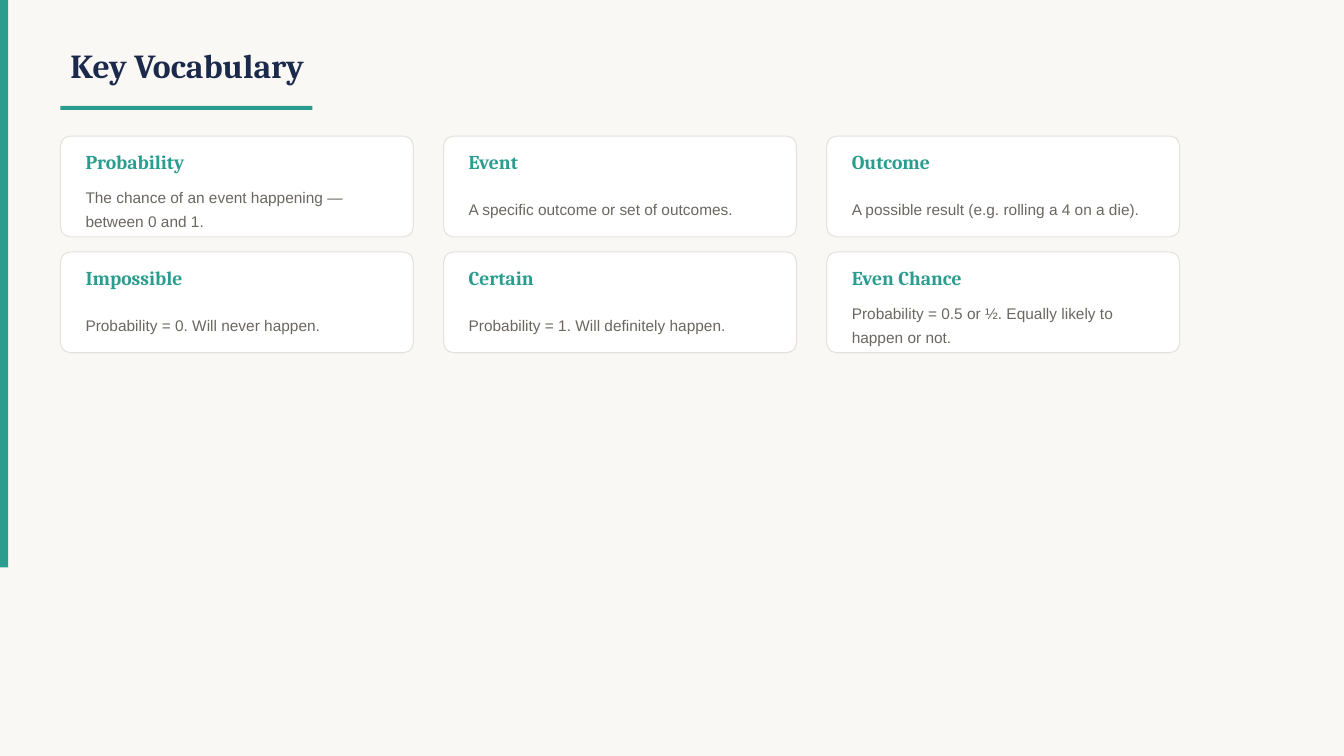
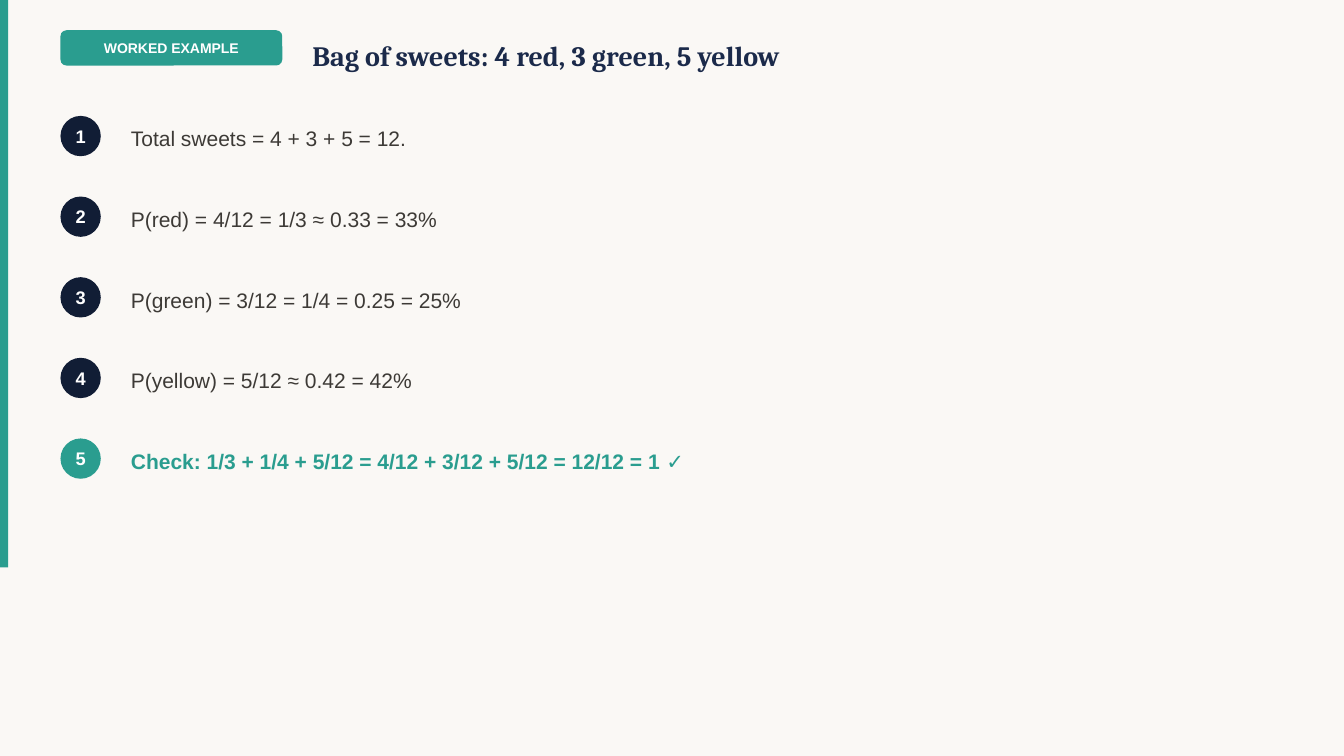
from dataclasses import dataclass

from pptx import Presentation
from pptx.dml.color import RGBColor
from pptx.enum.shapes import MSO_SHAPE
from pptx.enum.text import MSO_ANCHOR, PP_ALIGN
from pptx.util import Inches, Pt

RECTANGLE = MSO_SHAPE.RECTANGLE
ROUNDED = MSO_SHAPE.ROUNDED_RECTANGLE
OVAL = MSO_SHAPE.OVAL
MIDDLE = MSO_ANCHOR.MIDDLE
LEFT, CENTER = PP_ALIGN.LEFT, PP_ALIGN.CENTER

# Content
VOCABULARY_TITLE = "Key Vocabulary"
VOCABULARY = [
    ("Probability", "The chance of an event happening — between 0 and 1."),
    ("Event", "A specific outcome or set of outcomes."),
    ("Outcome", "A possible result (e.g. rolling a 4 on a die)."),
    ("Impossible", "Probability = 0. Will never happen."),
    ("Certain", "Probability = 1. Will definitely happen."),
    ("Even Chance", "Probability = 0.5 or ½. Equally likely to happen or not."),
]
EXAMPLE_BADGE = "WORKED EXAMPLE"
EXAMPLE_TITLE = "Bag of sweets: 4 red, 3 green, 5 yellow"
EXAMPLE_STEPS = [
    "Total sweets = 4 + 3 + 5 = 12.",
    "P(red) = 4/12 = 1/3 ≈ 0.33 = 33%",
    "P(green) = 3/12 = 1/4 = 0.25 = 25%",
    "P(yellow) = 5/12 ≈ 0.42 = 42%",
    "Check: 1/3 + 1/4 + 5/12 = 4/12 + 3/12 + 5/12 = 12/12 = 1 ✓",
]


@dataclass(frozen=True)
class Theme:
    paper: str = "FAF8F5"
    white: str = "FFFFFF"
    teal: str = "2A9D8F"
    navy: str = "1B2A4A"
    midnight: str = "111D35"
    ink: str = "3D3A36"
    muted: str = "6B6660"
    border: str = "E5E2DC"
    heading_font: str = "Cambria"
    body_font: str = "Arial"
    title_size: int = 24
    example_title_size: int = 20
    step_size: int = 15
    term_size: int = 14
    number_size: int = 13
    meaning_size: int = 11
    badge_size: int = 10


THEME = Theme()
MARGIN = 0.6


# Helpers
def write(shape, text, *, size, color, font=THEME.body_font, bold=False,
          align=LEFT, line_spacing=None):
    frame = shape.text_frame
    frame.word_wrap = True
    frame.vertical_anchor = MIDDLE
    para = frame.paragraphs[0]
    para.alignment = align
    if line_spacing:
        para.line_spacing = line_spacing
    span = para.add_run()
    span.text = text
    span.font.name = font
    span.font.size = Pt(size)
    span.font.bold = bold
    span.font.color.rgb = RGBColor.from_string(color)


def add_text(page, area, text, **style):
    box = page.shapes.add_textbox(*map(Inches, area))
    write(box, text, **style)


def add_heading(page, area, text, size, color=THEME.navy):
    add_text(page, area, text, size=size, color=color,
             font=THEME.heading_font, bold=True)


def add_block(page, kind, area, fill, line=None, corner=None):
    block = page.shapes.add_shape(kind, *map(Inches, area))
    block.shadow.inherit = False
    block.fill.solid()
    block.fill.fore_color.rgb = RGBColor.from_string(fill)
    if line:
        block.line.color.rgb = RGBColor.from_string(line)
        block.line.width = Pt(0.75)
    else:
        block.line.fill.background()
    if corner is not None:
        block.adjustments[0] = corner
    return block


def add_label(page, kind, area, text, size, fill, corner=None):
    label = add_block(page, kind, area, fill, corner=corner)
    frame = label.text_frame
    frame.margin_left = frame.margin_right = 0
    frame.margin_top = frame.margin_bottom = 0
    write(label, text, size=size, color=THEME.white, bold=True, align=CENTER)


def add_page(deck):
    page = deck.slides.add_slide(deck.slide_layouts[6])
    add_block(page, RECTANGLE, (0, 0, 0.08, 5.63), THEME.teal)
    return page


# Slides
def build_vocabulary(deck):
    page = add_page(deck)
    add_heading(page, (MARGIN, 0.3, 10, 0.7), VOCABULARY_TITLE, THEME.title_size)
    add_block(page, RECTANGLE, (MARGIN, 1.05, 2.5, 0.04), THEME.teal)

    columns, card_width, card_height = 3, 3.5, 1
    column_gap, row_gap, inset = 0.3, 0.15, 0.15
    text_width = card_width - 2 * inset
    for index, (term, meaning) in enumerate(VOCABULARY):
        row, column = divmod(index, columns)
        left = MARGIN + column * (card_width + column_gap)
        top = 1.35 + row * (card_height + row_gap)
        add_block(page, ROUNDED, (left, top, card_width, card_height),
                  THEME.white, line=THEME.border, corner=0.1)
        add_heading(page, (left + inset, top + 0.08, text_width, 0.35),
                    term, THEME.term_size, THEME.teal)
        add_text(page, (left + inset, top + 0.45, text_width, 0.5), meaning,
                 size=THEME.meaning_size, color=THEME.muted, line_spacing=1.3)


def build_example(deck):
    page = add_page(deck)
    add_label(page, ROUNDED, (MARGIN, 0.3, 2.2, 0.35), EXAMPLE_BADGE,
              THEME.badge_size, THEME.teal, corner=0.17)
    add_heading(page, (3, 0.3, 8, 0.5), EXAMPLE_TITLE, THEME.example_title_size)

    first_top, pitch, diameter = 1.15, 0.8, 0.4
    for number, step in enumerate(EXAMPLE_STEPS, start=1):
        top = first_top + (number - 1) * pitch
        is_check = number == len(EXAMPLE_STEPS)
        add_label(page, OVAL, (MARGIN, top, diameter, diameter), str(number),
                  THEME.number_size, THEME.teal if is_check else THEME.midnight)
        add_text(page, (1.2, top - 0.05, 10.5, 0.55), step,
                 size=THEME.step_size, bold=is_check,
                 color=THEME.teal if is_check else THEME.ink)


def main():
    deck = Presentation()
    deck.slide_width, deck.slide_height = Inches(13.33), Inches(7.5)
    backdrop = deck.slide_master.background.fill
    backdrop.solid()
    backdrop.fore_color.rgb = RGBColor.from_string(THEME.paper)
    build_vocabulary(deck)
    build_example(deck)
    deck.save("out.pptx")


if __name__ == "__main__":
    main()
